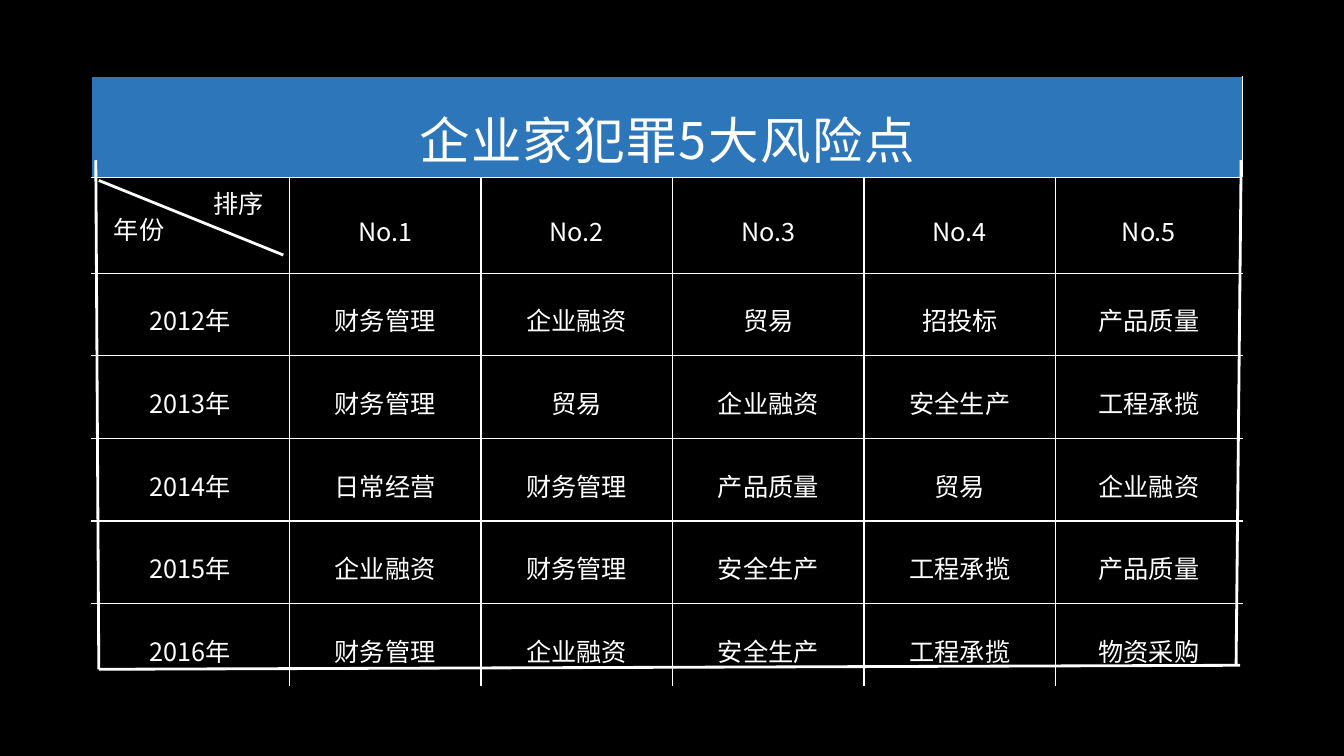
"""Build a slide with a table of the five main crime risks for entrepreneurs."""
from lxml.etree import SubElement as Sub
from pptx import Presentation
from pptx.dml.color import RGBColor
from pptx.enum.shapes import MSO_CONNECTOR as Conn
from pptx.enum.text import MSO_ANCHOR as Anchor, MSO_AUTO_SIZE as Auto, PP_ALIGN as Align
from pptx.oxml.ns import qn
from pptx.util import Inches, Pt

WHITE = RGBColor(0xFF, 0xFF, 0xFF)
BLACK = RGBColor(0, 0, 0)
BLUE = RGBColor(0x2D, 0x76, 0xB9)
FONT = "Noto Sans CJK SC"
PAD = Inches(0.03)


def style(para, size):
    for run in para.runs:
        run.font.size = Pt(size)
        run.font.name = FONT
        run.font.color.rgb = WHITE
        Sub(run.font._element, qn("a:ea"), typeface=FONT)


def edge(cell, side, color):
    line = Sub(cell._tc.get_or_add_tcPr(), qn("a:ln" + side), w=str(Pt(1)))
    fill = Sub(line, qn("a:solidFill"))
    Sub(fill, qn("a:srgbClr"), val=str(color))


deck = Presentation()
deck.slide_width = Inches(13.33)
deck.slide_height = Inches(7.5)
slide = deck.slides.add_slide(deck.slide_layouts[6])
slide.background.fill.solid()
slide.background.fill.fore_color.rgb = BLACK
shapes = slide.shapes

rows = [
    ["企业家犯罪5大风险点", "", "", "", "", ""],
    ["", "No.1", "No.2", "No.3", "No.4", "No.5"],
    ["2012年", "财务管理", "企业融资", "贸易", "招投标", "产品质量"],
    ["2013年", "财务管理", "贸易", "企业融资", "安全生产", "工程承揽"],
    ["2014年", "日常经营", "财务管理", "产品质量", "贸易", "企业融资"],
    ["2015年", "企业融资", "财务管理", "安全生产", "工程承揽", "产品质量"],
    ["2016年", "财务管理", "企业融资", "安全生产", "工程承揽", "物资采购"],
]
last_row, last_col = len(rows) - 1, len(rows[0]) - 1
table = shapes.add_table(len(rows), len(rows[0]), Inches(0.91), Inches(0.76),
                         Inches(11.4), Inches(5.9)).table
table.first_row = False
table.horz_banding = False
for col, width in zip(table.columns, [1.96, 1.9, 1.9, 1.9, 1.9, 1.85]):
    col.width = Inches(width)
for r, texts in enumerate(rows):
    table.rows[r].height = Inches(0.95 if r == 1 else 0.82)
    for c, text in enumerate(texts):
        cell = table.cell(r, c)
        cell.margin_left = cell.margin_right = PAD
        cell.margin_top = cell.margin_bottom = PAD
        cell.vertical_anchor = Anchor.MIDDLE
        edge(cell, "L", BLACK if c == 0 else WHITE)
        edge(cell, "R", BLACK if c == last_col else WHITE)
        edge(cell, "T", BLACK if r == 0 else WHITE)
        edge(cell, "B", BLACK if r == last_row else WHITE)
        cell.fill.background()
        if text:
            para = cell.text_frame.paragraphs[0]
            para.text = text
            para.alignment = Align.CENTER
            para.line_spacing = 1.3
            style(para, 36 if r == 0 else 18)

title = table.cell(0, 0)
title.merge(table.cell(0, last_col))
title.fill.solid()
title.fill.fore_color.rgb = BLUE
title.text_frame.paragraphs[0].runs[0].font._element.set("spc", "110")

for text, left, top in [("年份", 1.1, 2.12), ("排序", 2.09, 1.86)]:
    box = shapes.add_textbox(Inches(left), Inches(top), Inches(0.57), Inches(0.31))
    frame = box.text_frame
    frame.text = text
    frame.word_wrap = False
    frame.auto_size = Auto.SHAPE_TO_FIT_TEXT
    frame.vertical_anchor = Anchor.MIDDLE
    frame.margin_left = frame.margin_right = PAD
    frame.margin_top = frame.margin_bottom = PAD
    style(frame.paragraphs[0], 18)

lines = [
    (0.98, 1.79, 2.81, 2.53),
    (0.95, 1.59, 0.98, 6.64),
    (0.98, 6.64, 12.3, 6.6),
    (12.31, 1.59, 12.26, 6.59),
]
for ends in lines:
    line = shapes.add_connector(Conn.STRAIGHT, *[Inches(end) for end in ends])
    line.line.color.rgb = WHITE
    line.line.width = Pt(2)
    Sub(line._element.spPr, qn("a:effectLst"))

deck.save("out.pptx")
